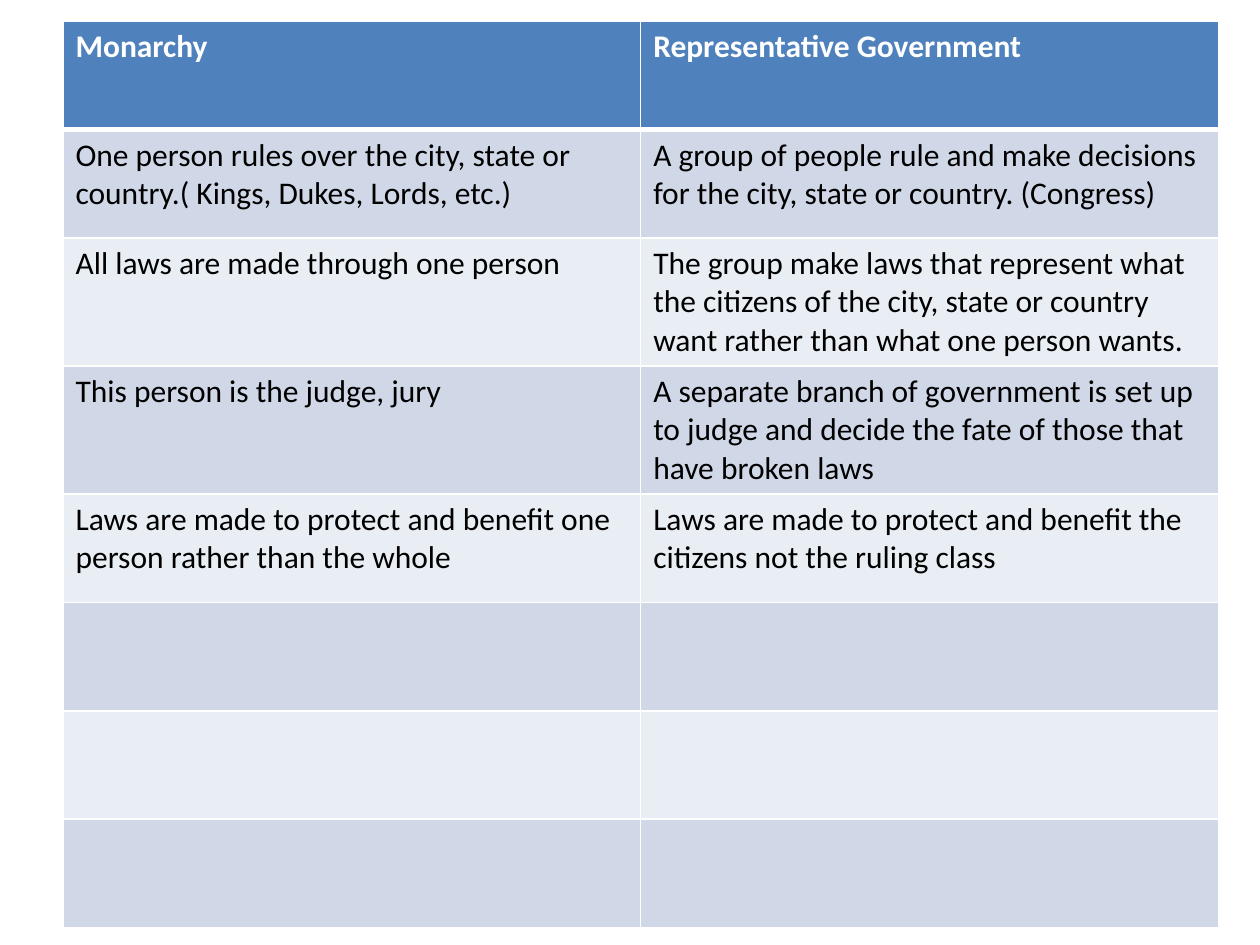
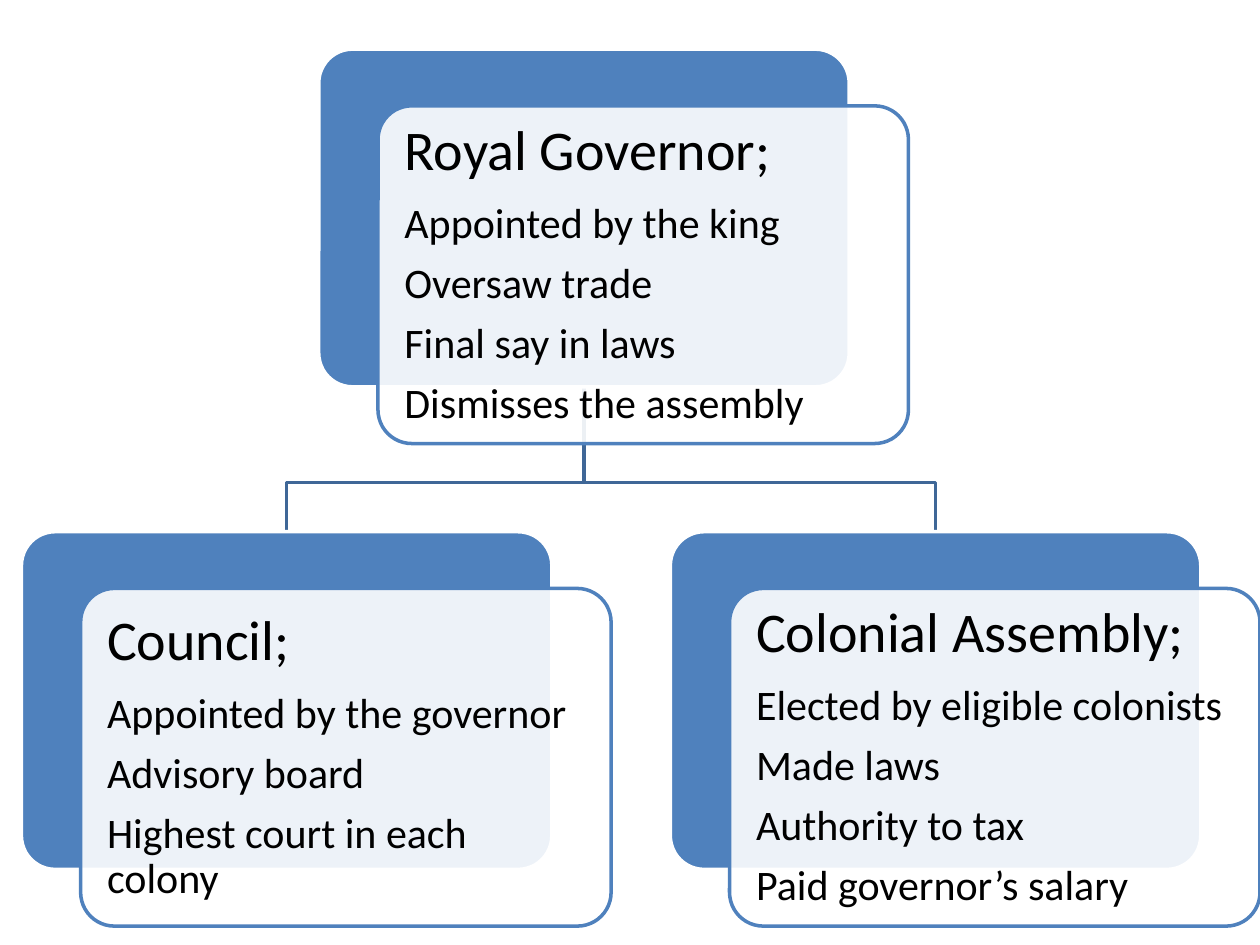
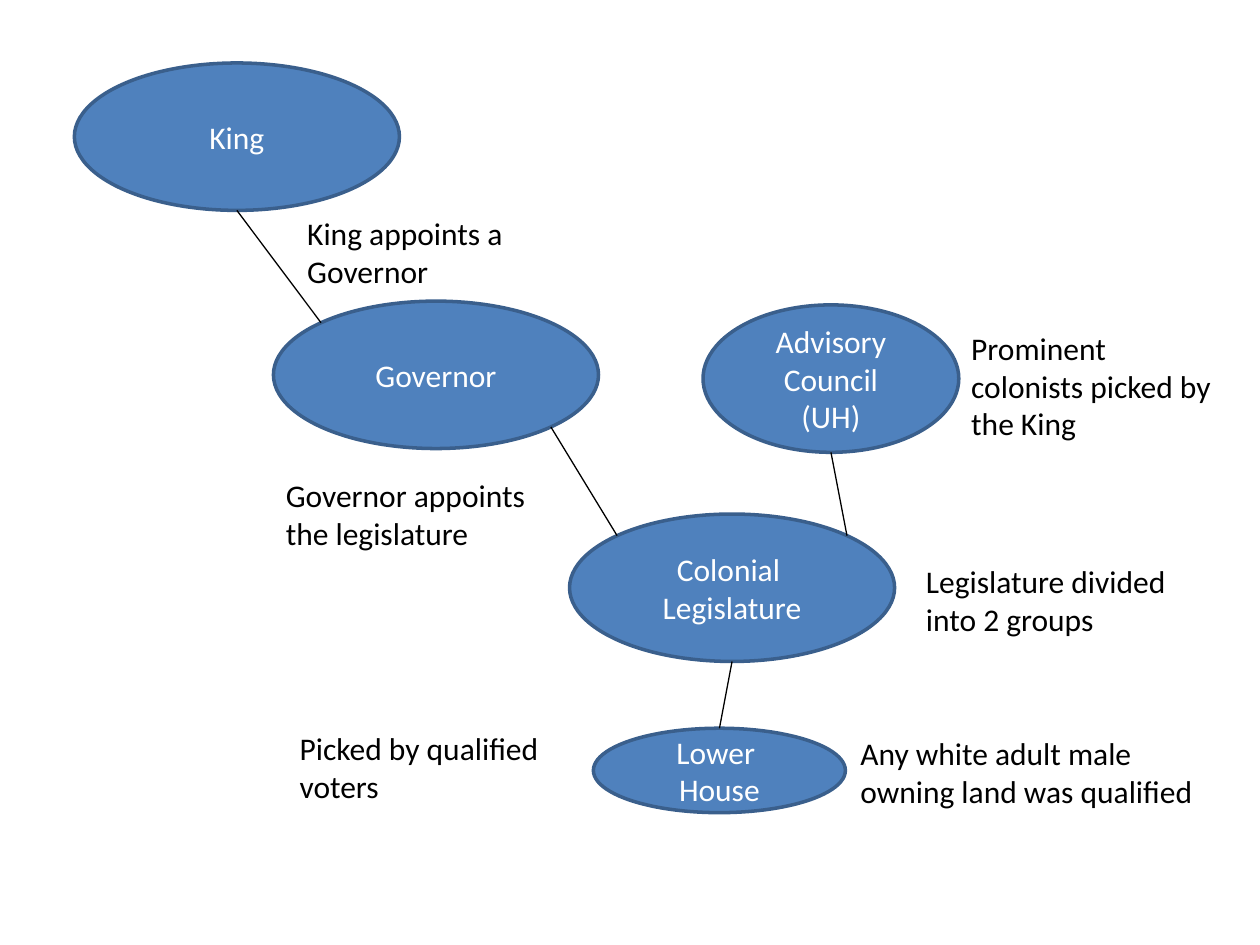
from math import cos, radians, sin

from lxml.etree import SubElement
from pptx import Presentation
from pptx.dml.color import RGBColor
from pptx.enum.shapes import MSO_CONNECTOR as LINK, MSO_SHAPE as SHAPE
from pptx.enum.text import MSO_ANCHOR as ANCHOR, MSO_AUTO_SIZE as FIT, PP_ALIGN as ALIGN
from pptx.oxml.ns import qn
from pptx.util import Inches, Pt

FONT = "Calibri"
COLORS = {
    "blue": "4F81BD", "edge": "3A5F8C", "branch": "3F6797",
    "white": "FFFFFF", "black": "000000",
    "band_dark": "D0D8E8", "band_light": "E9EDF4",
}

GOVERNMENTS = [
    ("Monarchy", "Representative Government"),
    ("One person rules over the city, state or country.( Kings, Dukes, Lords, etc.)",
     "A group of people rule and make decisions for the city, state or country. (Congress)"),
    ("All laws are made through one person",
     "The group make laws that represent what the citizens of the city, state or country "
     "want rather than what one person wants."),
    ("This person is the judge, jury",
     "A separate branch of government is set up to judge and decide the fate of those "
     "that have broken laws"),
    ("Laws are made to protect and benefit one person rather than the whole",
     "Laws are made to protect and benefit the citizens not the ruling class"),
    ("", ""), ("", ""), ("", ""),
]
ROW_HEIGHTS = [0.86, 0.86, 0.97, 0.97, 0.86, 0.86, 0.86, 0.86]

CARD_WIDTH, CARD_HEIGHT = 4.21, 2.68
GOVERNOR_CARD = (2.53, 0.39, ["Royal Governor;", "Appointed by the king", "Oversaw trade",
                              "Final say in laws", "Dismisses the assembly"])
LOWER_CARDS = [
    (0.17, 4.22, ["Council;", "Appointed by the governor", "Advisory board",
                  "Highest court in each colony"]),
    (5.32, 4.22, ["Colonial Assembly;", "Elected by eligible colonists", "Made laws",
                  "Authority to tax", "Paid governor’s salary"]),
]

OFFICES = {
    "governor": ((2.17, 2.39, 2.58, 1.17), ["Governor"]),
    "legislature": ((4.52, 4.08, 2.58, 1.17), ["Colonial ", "Legislature"]),
    "king": ((0.59, 0.5, 2.58, 1.17), ["King"]),
    "lower_house": ((4.71, 5.78, 2, 0.67), ["Lower ", "House"]),
    "council": ((5.58, 2.42, 2.03, 1.17), ["Advisory Council (UH)"]),
}
# Each end is an office and the clockwise angle from its right-hand point.
OFFICE_LINKS = [
    (("king", 90), ("governor", 225)),
    (("governor", 45), ("legislature", 225)),
    (("legislature", 315), ("council", 90)),
    (("legislature", 90), ("lower_house", 270)),
]
OFFICE_NOTES = [
    ((2.34, 1.65, 2.36, 0.71), "King appoints a Governor"),
    ((2.17, 3.73, 2.36, 0.71), "Governor appoints the legislature"),
    ((7.25, 4.41, 2.25, 0.71), "Legislature divided into 2 groups"),
    ((7.61, 2.56, 2.14, 1.01), "Prominent colonists picked by the King"),
    ((2.28, 5.74, 2.33, 0.71), "Picked by qualified voters"),
    ((6.73, 5.78, 3.02, 0.71), "Any white adult male owning land was qualified"),
]


def rgb(name):
    return RGBColor.from_string(COLORS[name])


def inches(box):
    return [Inches(length) for length in box]


def write(frame, lines, color, sizes=(18,), bold=False, **paragraph_format):
    """Fill a text frame; the last of sizes holds for all remaining lines."""
    for index, line in enumerate(lines):
        para = frame.paragraphs[0] if index == 0 else frame.add_paragraph()
        for name, value in paragraph_format.items():
            setattr(para, name, value)
        span = para.add_run()
        span.text = line
        size = sizes[min(index, len(sizes) - 1)]
        for name, value in {"name": FONT, "size": Pt(size), "bold": bold}.items():
            setattr(span.font, name, value)
        span.font.color.rgb = rgb(color)


def outline(shape, color, width=2):
    shape.line.color.rgb = rgb(color)
    shape.line.width = Pt(width)


def add_filled(page, kind, box, fill, line):
    shape = page.shapes.add_shape(kind, *inches(box))
    shape.shadow.inherit = False
    shape.fill.solid()
    shape.fill.fore_color.rgb = rgb(fill)
    outline(shape, line)
    return shape


def add_text_box(page, box, **frame_format):
    frame = page.shapes.add_textbox(*inches(box)).text_frame
    for name, value in {"word_wrap": True, **frame_format}.items():
        setattr(frame, name, value)
    return frame


def set_borders(cell, widths):
    properties = cell._tc.get_or_add_tcPr()
    for side, width in widths.items():
        border = SubElement(properties, qn(f"a:ln{side}"), w=str(Pt(width)))
        SubElement(SubElement(border, qn("a:solidFill")), qn("a:srgbClr"), val=COLORS["white"])


def build_comparison(page, box):
    table = page.shapes.add_table(len(GOVERNMENTS), 2, *inches(box)).table
    for row_index, texts in enumerate(GOVERNMENTS):
        table.rows[row_index].height = Inches(ROW_HEIGHTS[row_index])
        header = row_index == 0
        fill = "blue" if header else ("band_light", "band_dark")[row_index % 2]
        borders = {"L": 1, "R": 1, "T": 3 if row_index == 1 else 1, "B": 3 if header else 1}
        for column_index, text in enumerate(texts):
            cell = table.cell(row_index, column_index)
            set_borders(cell, borders)
            cell.fill.solid()
            cell.fill.fore_color.rgb = rgb(fill)
            if text:
                write(cell.text_frame, [text], "white" if header else "black", bold=header)


def add_card(page, left, top, lines):
    """Draw a blue plate with a translucent text panel shifted down and right."""
    front_left, front_top, inset = left + 0.47, top + 0.45, 0.08
    plate = add_filled(page, SHAPE.ROUNDED_RECTANGLE,
                       (left, top, CARD_WIDTH, CARD_HEIGHT), "blue", "white")
    panel = add_filled(page, SHAPE.ROUNDED_RECTANGLE,
                       (front_left, front_top, CARD_WIDTH, CARD_HEIGHT), "white", "blue")
    for shape in (plate, panel):
        shape.adjustments[0] = 0.1
    tint = panel.fill._xPr.find(qn("a:solidFill"))[0]
    SubElement(tint, qn("a:alpha"), val="90000")

    margins = {f"margin_{side}": Inches(0.13) for side in ("left", "top", "right", "bottom")}
    text_box = (front_left + inset, front_top + inset,
                CARD_WIDTH - 2 * inset, CARD_HEIGHT - 2 * inset)
    frame = add_text_box(page, text_box, vertical_anchor=ANCHOR.MIDDLE, **margins)
    write(frame, lines, "black", sizes=(32, 24), line_spacing=0.9)
    for para in frame.paragraphs:
        para.space_after = Pt(0.35 * para.runs[0].font.size.pt)


def add_branch(page, parent, child):
    """Draw the bent line from the foot of one card to the head of another."""
    start_x, end_x = (card[0] + CARD_WIDTH / 2 for card in (parent, child))
    start_y, end_y = parent[1] + CARD_HEIGHT, child[1]
    bend_y = end_y - 0.39
    builder = page.shapes.build_freeform(Inches(start_x), Inches(start_y))
    corners = [(start_x, bend_y), (end_x, bend_y), (end_x, end_y)]
    builder.add_line_segments([inches(corner) for corner in corners], close=False)
    branch = builder.convert_to_shape()
    branch.shadow.inherit = False
    branch.fill.background()
    outline(branch, "branch")


def build_hierarchy(page):
    for card in reversed(LOWER_CARDS):
        add_branch(page, GOVERNOR_CARD, card)
    for card in (GOVERNOR_CARD, *LOWER_CARDS):
        add_card(page, *card)


def rim_point(office, angle):
    left, top, width, height = OFFICES[office][0]
    return inches((left + width / 2 * (1 + cos(radians(angle))),
                   top + height / 2 * (1 + sin(radians(angle)))))


def build_offices(page):
    for box, lines in OFFICES.values():
        oval = add_filled(page, SHAPE.OVAL, box, "blue", "edge")
        write(oval.text_frame, lines, "white", alignment=ALIGN.CENTER)
    for start, end in OFFICE_LINKS:
        link = page.shapes.add_connector(LINK.STRAIGHT, *rim_point(*start), *rim_point(*end))
        outline(link, "black", 0.75)
        SubElement(link._element.spPr, qn("a:effectLst"))
    for box, note in OFFICE_NOTES:
        write(add_text_box(page, box, auto_size=FIT.SHAPE_TO_FIT_TEXT), [note], "black")


def main():
    deck = Presentation()
    deck.slide_width, deck.slide_height = Inches(10), Inches(7.5)
    blank = deck.slide_layouts[6]
    build_comparison(deck.slides.add_slide(blank), (0.5, 0.17, 9.17, 7.15))
    build_hierarchy(deck.slides.add_slide(blank))
    build_offices(deck.slides.add_slide(blank))
    deck.save("out.pptx")


if __name__ == "__main__":
    main()
